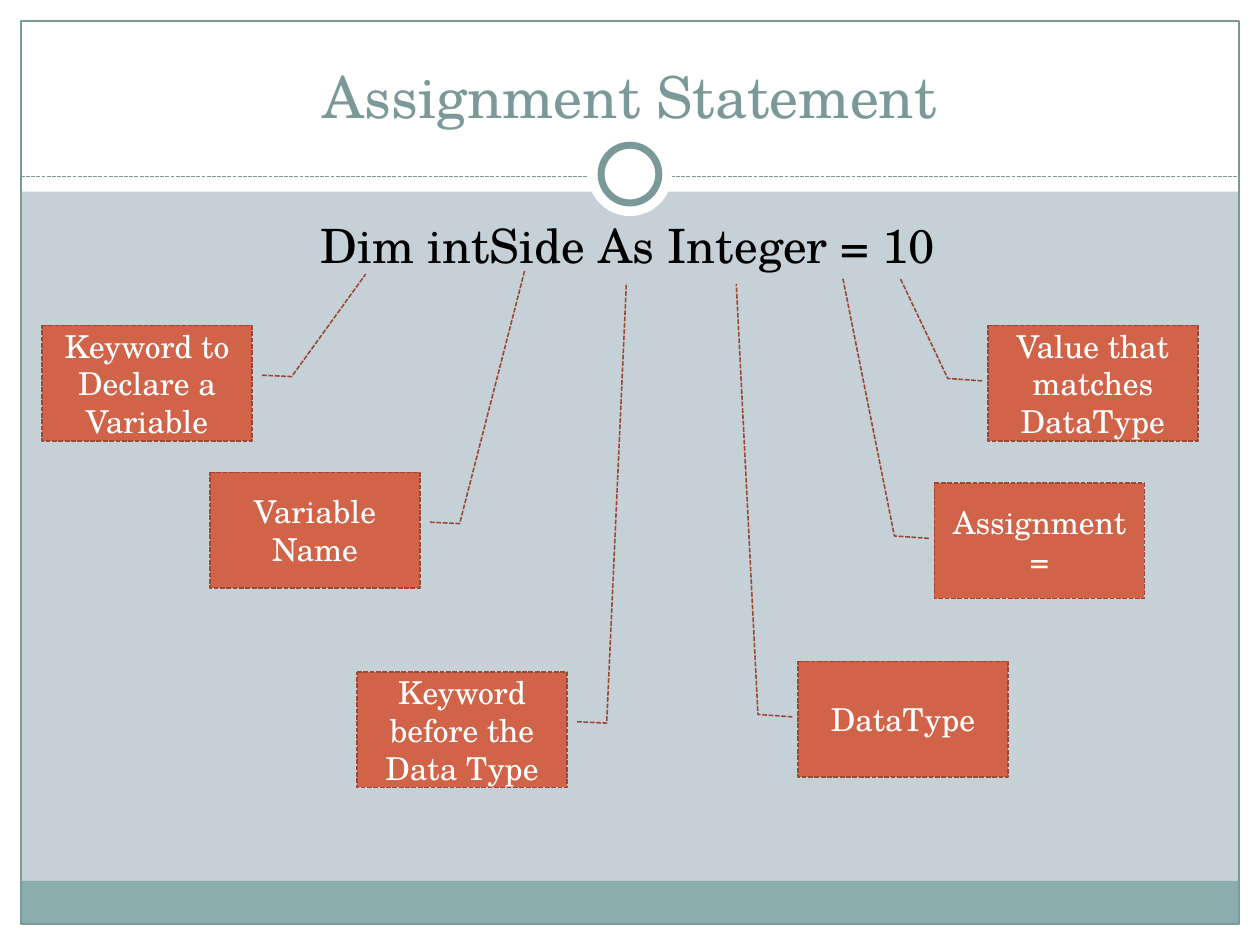
from lxml import etree
from pptx import Presentation
from pptx.dml.color import RGBColor
from pptx.enum import dml, shapes, text
from pptx.oxml import ns
from pptx.util import Pt

FONT = "TeX Gyre Schola"
HUES = {
    "back": "C5D1D7", "white": "FFFFFF", "band": "8CADAE", "trim": "7C999A",
    "box": "D16349", "edge": "9B4936", "ink": "000000",
}
KINDS = shapes.MSO_SHAPE
WIDE, HIGH, EDGE = 720, 540, 12
BOX = (120, 66)

# Callout lines: start and bend shared by side, then the end; y, x as shares of the box.
RIGHT = (0.431, 1.048, 0.443, 1.189)
LEFT = (0.48, -0.027, 0.459, -0.191)
NOTES = [
    (24, 186, ["Keyword to Declare a Variable"], RIGHT, (-0.446, 1.542)),
    (120, 270, ["Variable", "Name"], RIGHT, (-1.744, 1.498)),
    (204, 384, ["Keyword before the Data Type"], RIGHT, (-3.366, 1.283)),
    (456, 378, ["DataType"], LEFT, (-3.269, -0.294)),
    (534, 276, ["Assignment ="], LEFT, (-1.777, -0.437)),
    (564.5, 186, ["Value that matches DataType"], LEFT, (-0.414, -0.419)),
]


def hue(name):
    return RGBColor.from_string(HUES[name])


def stroke(line, name, width, dash=False):
    line.color.rgb = hue(name)
    line.width = Pt(width)
    if dash:
        line.dash_style = dml.MSO_LINE.SQUARE_DOT


def block(slide, kind, box, fill=None, line=None):
    """Add a preset shape; line is (colour, width[, dash])."""
    shape = slide.shapes.add_shape(kind, *map(Pt, box))
    shape.shadow.inherit = False
    if fill:
        shape.fill.solid()
        shape.fill.fore_color.rgb = hue(fill)
    else:
        shape.fill.background()
    if line:
        stroke(shape.line, *line)
    else:
        shape.line.fill.background()
    return shape


def write(shape, lines, size, name, anchor, before=0):
    frame = shape.text_frame
    frame.word_wrap = True
    frame.auto_size = text.MSO_AUTO_SIZE.NONE
    frame.vertical_anchor = anchor
    for i, words in enumerate(lines):
        para = frame.add_paragraph() if i else frame.paragraphs[0]
        para.alignment = text.PP_ALIGN.CENTER
        para.space_before = Pt(before)
        run = para.add_run()
        run.text = words
        run.font.name = FONT
        run.font.size = Pt(size)
        run.font.color.rgb = hue(name)


def frame(slide, top, foot):
    """Draw the white margins, foot band, outline and dashed rule with its ring."""
    right, low = WIDE - EDGE, HIGH - EDGE
    for box in [(0, low, WIDE, EDGE), (0, 0, WIDE, top),
                (0, 0, EDGE, HIGH), (right, 0, EDGE, HIGH)]:
        block(slide, KINDS.RECTANGLE, box, "white")
    block(slide, KINDS.RECTANGLE, (EDGE, low - foot, right - EDGE, foot), "band")
    block(slide, KINDS.RECTANGLE, (EDGE, EDGE, right - EDGE, low - EDGE),
          line=("trim", 0.75))

    level = top - 8.8
    rule = slide.shapes.add_connector(
        shapes.MSO_CONNECTOR.STRAIGHT, Pt(EDGE), Pt(level), Pt(right), Pt(level))
    stroke(rule.line, "trim", 0.75, True)
    etree.SubElement(rule._element.spPr, ns.qn("a:effectLst"))

    for size, line in [(48, None), (33, ("trim", 4))]:
        box = (WIDE / 2 - size / 2, 99.5 - size / 2, size, size)
        block(slide, KINDS.OVAL, box, "white", line)


def head(slide, box, words):
    title = slide.shapes.title
    title.left, title.top, title.width, title.height = map(Pt, box)
    write(title, [words], 33, "trim", text.MSO_ANCHOR.BOTTOM)
    slide.shapes._spTree.append(title._element)  # in front of the frame


def code(slide, box, words):
    area = slide.shapes.add_textbox(*map(Pt, box))
    write(area, [words], 27, "ink", text.MSO_ANCHOR.TOP, 5.4)


def note(slide, box, lines, bends):
    shape = block(slide, KINDS.LINE_CALLOUT_2, box, "box", ("edge", 0.9, True))
    for i, bend in enumerate(bends):
        shape.adjustments[i] = bend
    write(shape, lines, 18, "white", text.MSO_ANCHOR.MIDDLE)


def main():
    deck = Presentation()
    deck.slide_width, deck.slide_height = Pt(WIDE), Pt(HIGH)
    slide = deck.slides.add_slide(deck.slide_layouts[5])
    slide.background.fill.solid()
    slide.background.fill.fore_color.rgb = hue("back")

    frame(slide, 109.6, 24.6)
    head(slide, (24, 18, 672, 60), "Assignment Statement")
    code(slide, (24, 120, 669.6, 360), "Dim intSide As Integer = 10")
    for left, top, lines, start, end in NOTES:
        note(slide, (left, top, *BOX), lines, start + end)
    deck.save("out.pptx")


if __name__ == "__main__":
    main()
